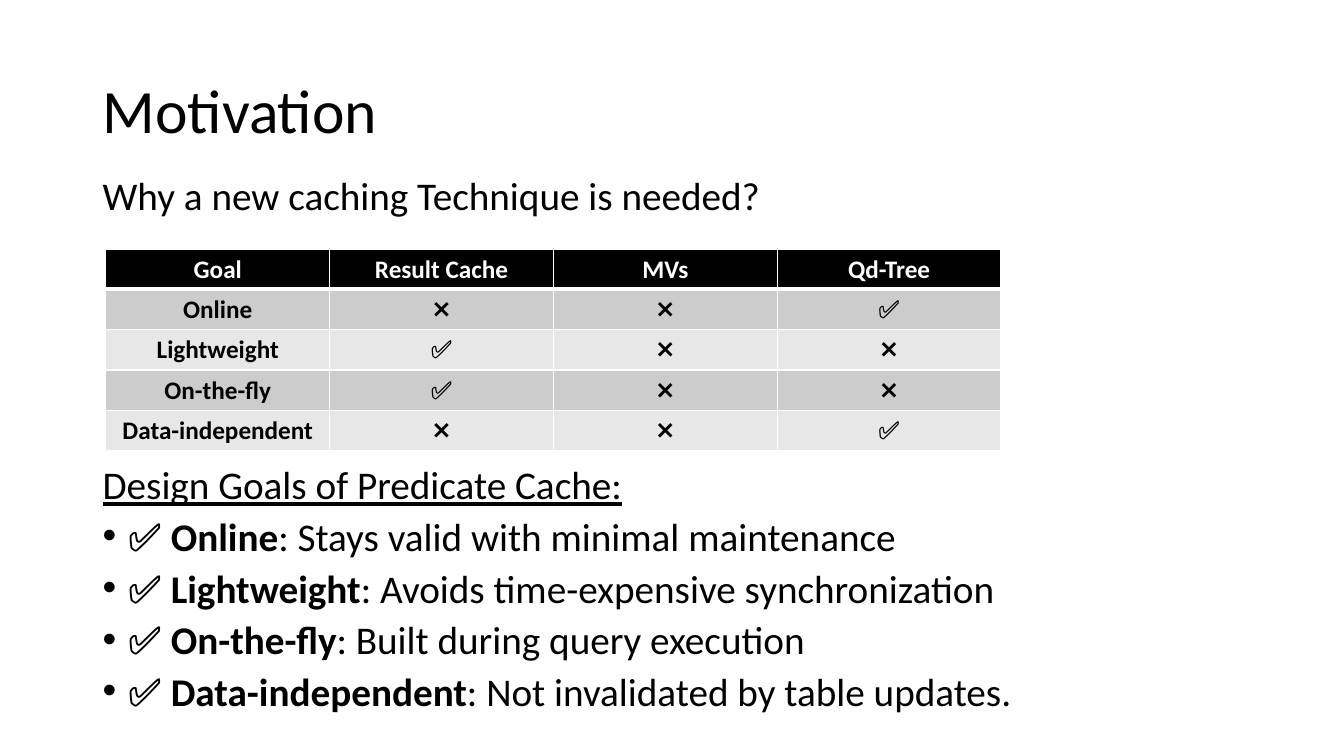
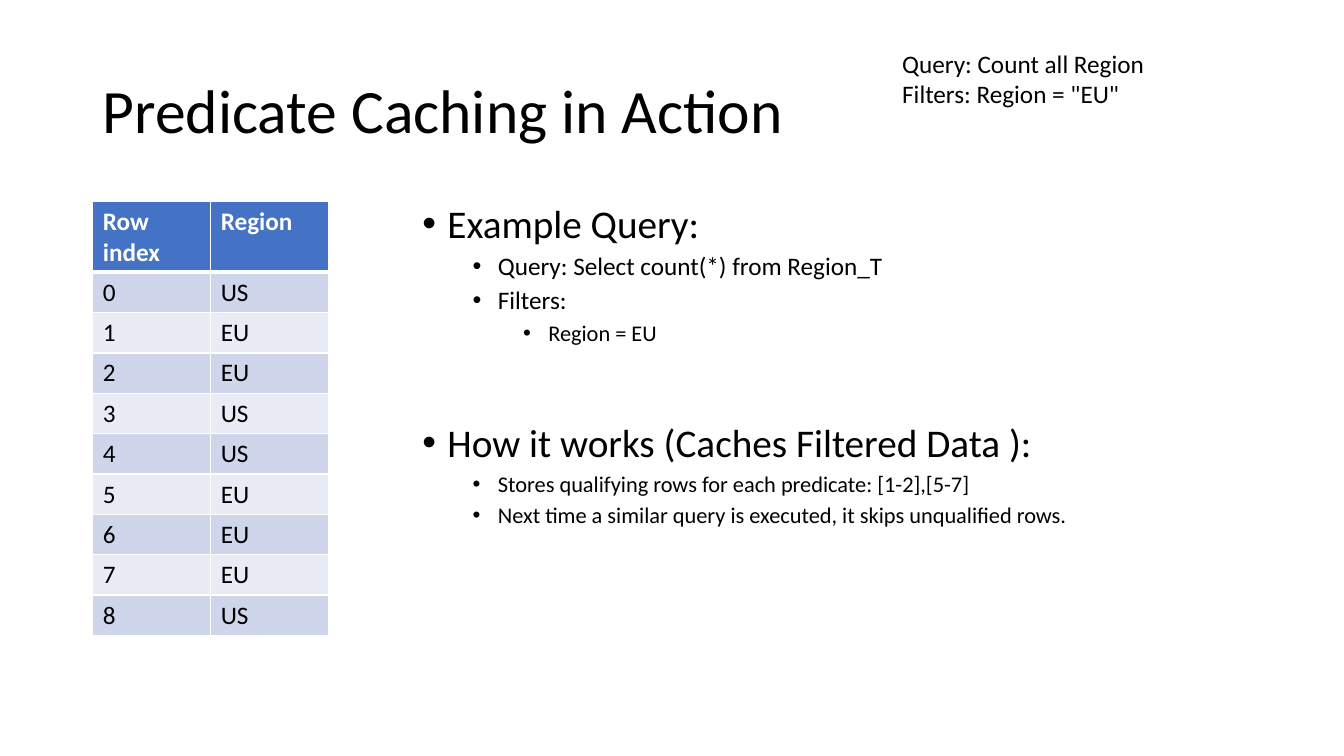
from dataclasses import dataclass, field
from typing import Any

from lxml.etree import SubElement
from pptx import Presentation
from pptx.dml.color import RGBColor
from pptx.enum.text import MSO_ANCHOR, MSO_AUTO_SIZE, PP_ALIGN
from pptx.oxml.ns import qn
from pptx.slide import Slide
from pptx.util import Inches, Pt


@dataclass(frozen=True)
class Theme:
    font: str = "Calibri"
    black: str = "000000"
    white: str = "FFFFFF"
    blue: str = "4472C4"
    grays: tuple[str, str] = ("CCCCCC", "E7E7E7")
    tints: tuple[str, str] = ("CFD5EA", "E9EBF5")
    title: int = 44
    lead: int = 28
    text: int = 18
    small: int = 16


THEME = Theme()
LEFT, WIDTH = 0.92, 11.5
YES, NO = "✅", "❌"


@dataclass(frozen=True)
class Run:
    text: str
    form: dict[str, Any] = field(default_factory=dict)


@dataclass(frozen=True)
class Line:
    runs: tuple[Run, ...]
    size: int
    level: int = 0
    mark: bool = False
    space: float = 0.9
    before: int = 0


@dataclass(frozen=True)
class Box:
    left: float
    top: float
    width: float
    height: float


@dataclass(frozen=True)
class Grid:
    left: float
    top: float
    col: float
    rows: list[tuple[str, ...]]
    head: str
    bands: tuple[str, str]
    align: PP_ALIGN
    bold: bool
    height: float = 0.4


def style(item: Any, form: dict[str, Any]) -> None:
    for name, value in form.items():
        setattr(item, name, value)


def add_run(para: Any, run: Run, size: int, color: str = THEME.black) -> None:
    part = para.add_run()
    part.text = run.text
    style(part.font, {"name": THEME.font, "size": Pt(size), **run.form})
    part.font.color.rgb = RGBColor.from_string(color)


def add_mark(para: Any, level: int) -> None:
    props = para._p.get_or_add_pPr()
    props.set("marL", str(Inches(0.25 + 0.5 * level)))
    props.set("indent", str(Inches(-0.25)))
    SubElement(props, qn("a:buFont"), typeface="Arial")
    SubElement(props, qn("a:buChar"), char="•")


def add_text(slide: Slide, box: Box, lines: list[Line], form: dict[str, Any]) -> None:
    shape = slide.shapes.add_textbox(
        Inches(box.left), Inches(box.top), Inches(box.width), Inches(box.height)
    )
    frame = shape.text_frame
    style(frame, {"word_wrap": True, **form})
    for index, line in enumerate(lines):
        para = frame.add_paragraph() if index else frame.paragraphs[0]
        style(para, {
            "level": line.level,
            "line_spacing": line.space,
            "space_before": Pt(line.before),
        })
        if line.mark:
            add_mark(para, line.level)
        for run in line.runs:
            add_run(para, run, line.size)


def add_title(slide: Slide, text: str) -> None:
    add_text(slide, Box(LEFT, 0.4, WIDTH, 1.45),
             [Line((Run(text),), THEME.title)],
             {"vertical_anchor": MSO_ANCHOR.MIDDLE})


def add_edge(cell: Any, side: str, width: int) -> None:
    edge = SubElement(cell._tc.get_or_add_tcPr(), qn(f"a:{side}"), w=str(Pt(width)))
    fill = SubElement(edge, qn("a:solidFill"))
    SubElement(fill, qn("a:srgbClr"), val=THEME.white)


def add_grid(slide: Slide, grid: Grid) -> None:
    count, span = len(grid.rows), len(grid.rows[0])
    table = slide.shapes.add_table(
        count, span, Inches(grid.left), Inches(grid.top),
        Inches(grid.col * span), Inches(grid.height * count),
    ).table
    for row, texts in enumerate(grid.rows):
        head = row == 0
        for col, text in enumerate(texts):
            cell = table.cell(row, col)
            for side in ("lnL", "lnR", "lnT", "lnB"):
                thick = (head and side == "lnB") or (row == 1 and side == "lnT")
                add_edge(cell, side, 3 if thick else 1)
            cell.fill.solid()
            shade = grid.head if head else grid.bands[(row - 1) % 2]
            cell.fill.fore_color.rgb = RGBColor.from_string(shade)
            para = cell.text_frame.paragraphs[0]
            para.alignment = grid.align
            bold = head or (grid.bold and col == 0)
            add_run(para, Run(text, {"bold": bold}), THEME.text,
                    THEME.white if head else THEME.black)


def draw_goals(slide: Slide) -> None:
    add_title(slide, "Motivation")
    add_grid(slide, Grid(1.05, 2.47, 2.22, [
        ("Goal", "Result Cache", "MVs", "Qd-Tree"),
        ("Online", NO, NO, YES),
        ("Lightweight", YES, NO, NO),
        ("On-the-fly", YES, NO, NO),
        ("Data-independent", NO, NO, YES),
    ], THEME.black, THEME.grays, PP_ALIGN.CENTER, True))
    add_text(slide, Box(LEFT, 1.7, WIDTH, 0.65),
             [Line((Run("Why a new caching Technique is needed?"),),
                   THEME.lead, before=10)], {})
    goals = {
        "Online": "Stays valid with minimal maintenance",
        "Lightweight": "Avoids time-expensive synchronization",
        "On-the-fly": "Built during query execution",
        "Data-independent": "Not invalidated by table updates.",
    }
    lines = [Line((Run("Design Goals of Predicate Cache:", {"underline": True}),),
                  THEME.lead, space=0.8, before=10)]
    lines += [
        Line((Run(f"{YES} "), Run(goal, {"bold": True}), Run(f": {text}")),
             THEME.lead, mark=True, space=0.8, before=10)
        for goal, text in goals.items()
    ]
    add_text(slide, Box(LEFT, 4.61, WIDTH, 2.7), lines, {})


def draw_query(slide: Slide) -> None:
    add_title(slide, "Predicate Caching in Action")
    zones = ("US", "EU", "EU", "US", "US", "EU", "EU", "EU", "US")
    rows = [("Row index", "Region")]
    rows += [(str(index), zone) for index, zone in enumerate(zones)]
    add_grid(slide, Grid(LEFT, 2, 1.17, rows, THEME.blue, THEME.tints,
                         PP_ALIGN.LEFT, False))
    notes = ("Query: Count all Region", 'Filters: Region = "EU"')
    add_text(slide, Box(8.85, 0.43, 3.96, 0.71),
             [Line((Run(note),), THEME.text, space=1.0) for note in notes],
             {"auto_size": MSO_AUTO_SIZE.SHAPE_TO_FIT_TEXT})
    steps = [
        ("Example Query:", THEME.lead, 0, 10),
        ("Query: Select count(*) from Region_T", THEME.text, 1, 5),
        ("Filters:", THEME.text, 1, 5),
        ("Region = EU", THEME.small, 2, 5),
        ("How it works (Caches Filtered Data ):", THEME.lead, 0, 55),
        ("Stores qualifying rows for each predicate: [1-2],[5-7]", THEME.small, 1, 5),
        ("Next time a similar query is executed, it skips unqualified rows.",
         THEME.small, 1, 5),
    ]
    add_text(slide, Box(4.09, 1.98, 8.33, 4.77),
             [Line((Run(text),), size, level, True, before=gap)
              for text, size, level, gap in steps], {})


def main() -> None:
    deck = Presentation()
    style(deck, {"slide_width": Inches(13.33), "slide_height": Inches(7.5)})
    for draw in (draw_goals, draw_query):
        draw(deck.slides.add_slide(deck.slide_layouts[6]))
    deck.save("out.pptx")


if __name__ == "__main__":
    main()
